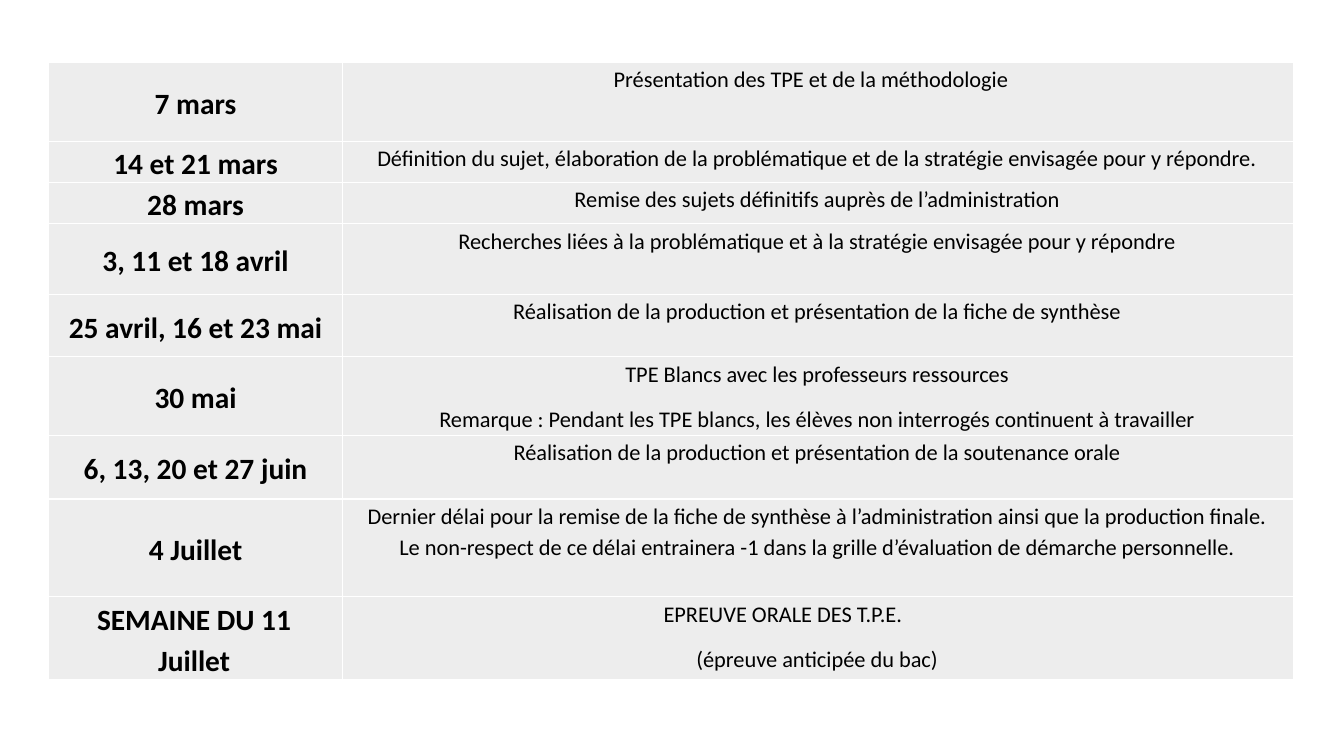
import pptx
import pptx.util
import pptx.dml.color
import pptx.enum.text
import pptx.oxml
import pptx.oxml.ns

Inches = pptx.util.Inches
Pt = pptx.util.Pt
RGBColor = pptx.dml.color.RGBColor

SCHEDULE = [
    (0.78, "7 mars", ["Présentation des TPE et de la méthodologie"]),
    (0.41, "14 et 21 mars", ["Définition du sujet, élaboration de la problématique et de la stratégie envisagée pour y répondre."]),
    (0.41, "28 mars", ["Remise des sujets définitifs auprès de l’administration"]),
    (0.7, "3, 11 et 18 avril", ["Recherches liées à la problématique et à la stratégie envisagée pour y répondre"]),
    (0.62, "25 avril, 16 et 23 mai", ["Réalisation de la production et présentation de la fiche de synthèse"]),
    (0.78, "30 mai", ["TPE Blancs avec les professeurs ressources",
                      "Remarque : Pendant les TPE blancs, les élèves non interrogés continuent à travailler"]),
    (0.63, "6, 13, 20 et 27 juin", ["Réalisation de la production et présentation de la soutenance orale"]),
    (0.97, "4 Juillet", ["Dernier délai pour la remise de la fiche de synthèse à l’administration ainsi que la production finale. "
                         "Le non-respect de ce délai entrainera -1 dans la grille d’évaluation de démarche personnelle."]),
    (0.78, "SEMAINE DU 11 Juillet", ["EPREUVE ORALE DES T.P.E.", "(épreuve anticipée du bac)"]),
]
LAST = len(SCHEDULE) - 1
COLUMNS = [2.92, 9.43]
LEFT, TOP = 0.48, 0.62
TASK_INDENT = (0.12, 0)
INDENTS = {
    (0, 1, 0): (0, 0),
    (LAST, 0, 0): (0.12, 0.15),
    (LAST, 1, 0): (0, 0.56),
}
FONT = "Calibri"
BLACK = RGBColor(0x00, 0x00, 0x00)
GREY = RGBColor(0xED, 0xED, 0xED)
BORDER = ('<a:{} {} w="12700"><a:solidFill><a:srgbClr val="FFFFFF"/>'
          '</a:solidFill></a:{}>')


def add_borders(cell):
    tcPr = cell._tc.get_or_add_tcPr()
    for i, side in enumerate(("lnL", "lnR", "lnT", "lnB")):
        xml = BORDER.format(side, pptx.oxml.ns.nsdecls("a"), side)
        tcPr.insert(i, pptx.oxml.parse_xml(xml))


def fill_cell(cell, row, col, lines):
    is_date = col == 0
    cell.margin_left = Inches(0.06)
    cell.margin_right = Inches(0.06 if is_date else 0.2)
    cell.margin_top = cell.margin_bottom = 0
    anchor = pptx.enum.text.MSO_ANCHOR
    cell.vertical_anchor = anchor.MIDDLE if is_date else anchor.TOP
    cell.fill.solid()
    cell.fill.fore_color.rgb = GREY
    add_borders(cell)
    tf = cell.text_frame
    tf.text = "\n".join(lines)
    for i, p in enumerate(tf.paragraphs):
        p.alignment = pptx.enum.text.PP_ALIGN.CENTER
        p.line_spacing = 1.15
        p.space_before = Pt(10)
        before, after = INDENTS.get((row, col, i), (0, 0) if is_date else TASK_INDENT)
        pPr = p._p.get_or_add_pPr()
        pPr.set("marL", str(Inches(before)))
        pPr.set("marR", str(Inches(after)))
        for r in p.runs:
            r.font.name = FONT
            r.font.size = Pt(21 if is_date else 16)
            r.font.bold = is_date
            r.font.color.rgb = BLACK


def main():
    prs = pptx.Presentation()
    prs.slide_width, prs.slide_height = Inches(13.33), Inches(7.5)
    slide = prs.slides.add_slide(prs.slide_layouts[6])
    height = sum(row[0] for row in SCHEDULE)
    frame = slide.shapes.add_table(len(SCHEDULE), len(COLUMNS), Inches(LEFT), Inches(TOP),
                                   Inches(sum(COLUMNS)), Inches(height))
    table = frame.table
    table.first_row = False
    table.horz_banding = False
    for column, width in zip(table.columns, COLUMNS):
        column.width = Inches(width)
    for i, (row_height, date, tasks) in enumerate(SCHEDULE):
        table.rows[i].height = Inches(row_height)
        fill_cell(table.cell(i, 0), i, 0, [date])
        fill_cell(table.cell(i, 1), i, 1, tasks)
    prs.save("out.pptx")


if __name__ == "__main__":
    main()
